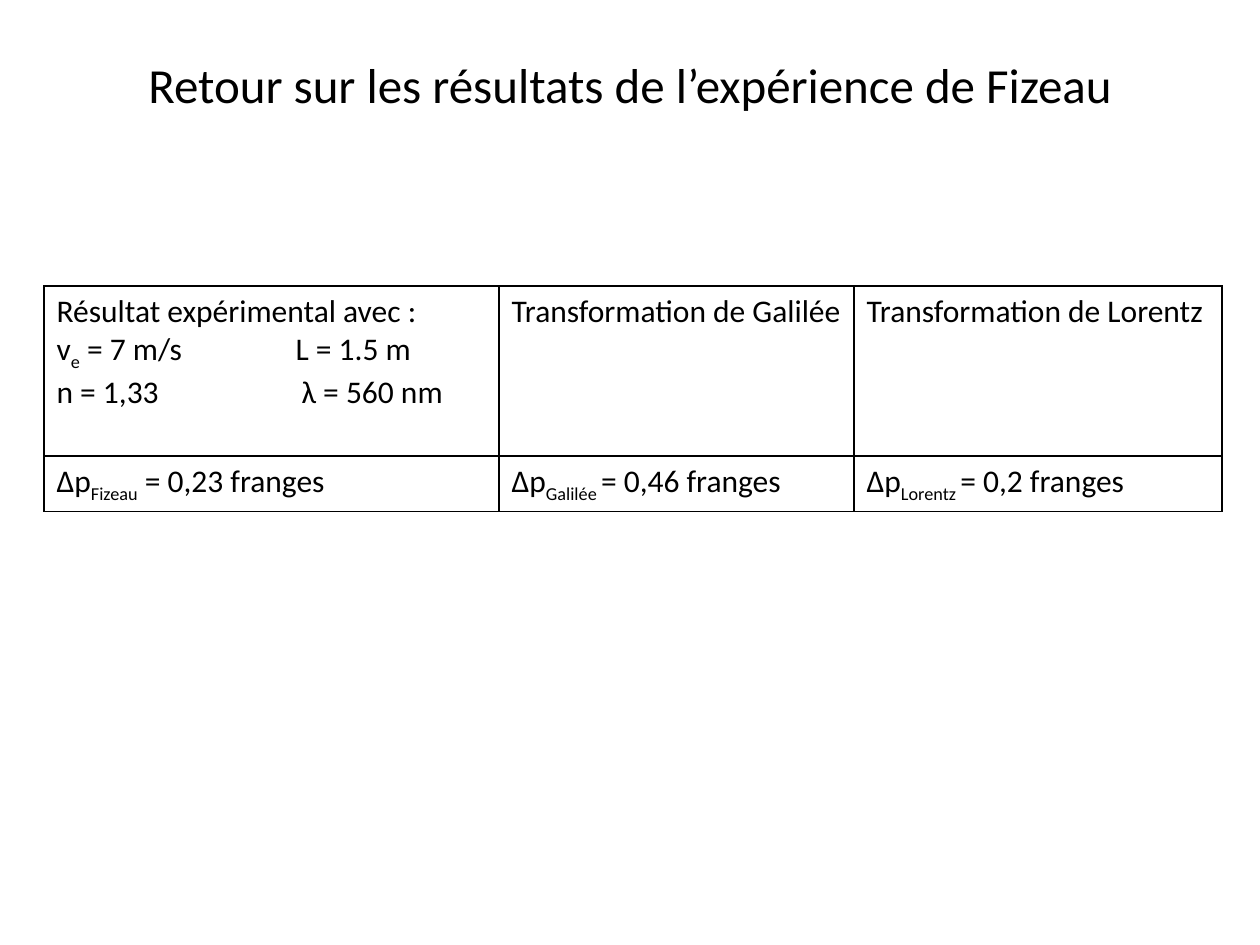
import pptx
import pptx.dml.color
import pptx.enum.text
import pptx.oxml.ns
import pptx.util
from lxml import etree

PX = 914400 / 126
BLACK = pptx.dml.color.RGBColor(0, 0, 0)
FONT = "Calibri"
TITLE_SIZE, TABLE_SIZE = 28, 18
BORDER_WIDTH = 1

COLUMN_WIDTHS = (455, 355, 368)
ROW_HEIGHTS = (170, 55)

# Each cell is a list of lines; a line is a list of (text, is_subscript)
HEADINGS = [
    [
        [("Résultat expérimental avec :", False)],
        [("v", False), ("e", True), (" = 7 m/s\tL = 1.5 m", False)],
        [("n = 1,33\tλ = 560 nm", False)],
    ],
    [[("Transformation de Galilée", False)]],
    [[("Transformation de Lorentz", False)]],
]
RESULTS = [
    [[("Δp", False), ("Fizeau", True), (" = 0,23 franges", False)]],
    [[("Δp", False), ("Galilée ", True), ("= 0,46 franges", False)]],
    [[("Δp", False), ("Lorentz ", True), ("= 0,2 franges", False)]],
]
TAB_STOPS = {1: 239, 2: 245}  # line number in a cell: px from the text edge


def px(length):
    return pptx.util.Emu(round(length * PX))


def add_run(paragraph, text, size, subscript=False):
    run = paragraph.add_run()
    run.text = text
    font_format = {"name": FONT, "size": pptx.util.Pt(size)}
    for name, value in font_format.items():
        setattr(run.font, name, value)
    run.font.color.rgb = BLACK
    if subscript:
        run.font._element.set("baseline", "-25000")


def add_tab_stop(paragraph, position):
    tag = pptx.oxml.ns.qn
    properties = paragraph._p.get_or_add_pPr()
    tab_list = etree.SubElement(properties, tag("a:tabLst"))
    etree.SubElement(tab_list, tag("a:tab"), pos=str(px(position)), algn="l")


def set_borders(cell):
    tag = pptx.oxml.ns.qn
    properties = cell._tc.get_or_add_tcPr()
    width = str(pptx.util.Pt(BORDER_WIDTH))
    for side in ("a:lnL", "a:lnR", "a:lnT", "a:lnB"):
        line = etree.SubElement(properties, tag(side), w=width)
        fill = etree.SubElement(line, tag("a:solidFill"))
        etree.SubElement(fill, tag("a:srgbClr"), val=str(BLACK))


def fill_cell(cell, lines):
    set_borders(cell)
    cell.fill.background()
    for number, line in enumerate(lines):
        frame = cell.text_frame
        paragraph = frame.add_paragraph() if number else frame.paragraphs[0]
        if number in TAB_STOPS:
            add_tab_stop(paragraph, TAB_STOPS[number])
        for text, subscript in line:
            add_run(paragraph, text, TABLE_SIZE, subscript)


def add_title(slide, text):
    box = slide.shapes.add_textbox(px(63), px(5), px(1134), px(157))
    frame_format = {
        "word_wrap": True,
        "vertical_anchor": pptx.enum.text.MSO_ANCHOR.MIDDLE,
    }
    for name, value in frame_format.items():
        setattr(box.text_frame, name, value)
    paragraph = box.text_frame.paragraphs[0]
    paragraph.alignment = pptx.enum.text.PP_ALIGN.CENTER
    add_run(paragraph, text, TITLE_SIZE)


def add_results_table(slide, rows):
    table = slide.shapes.add_table(
        len(rows), len(COLUMN_WIDTHS), px(44), px(286),
        px(sum(COLUMN_WIDTHS)), px(sum(ROW_HEIGHTS)),
    ).table
    for name, value in {"first_row": False, "horz_banding": False}.items():
        setattr(table, name, value)
    for column, width in zip(table.columns, COLUMN_WIDTHS):
        column.width = px(width)
    for row, height, contents in zip(table.rows, ROW_HEIGHTS, rows):
        row.height = px(height)
        for cell, lines in zip(row.cells, contents):
            fill_cell(cell, lines)


def main():
    presentation = pptx.Presentation()
    presentation.slide_width = px(1260)
    presentation.slide_height = px(945)
    slide = presentation.slides.add_slide(presentation.slide_layouts[6])

    # Title
    add_title(slide, "Retour sur les résultats de l’expérience de Fizeau")

    # Measured and predicted fringe shifts
    add_results_table(slide, [HEADINGS, RESULTS])

    presentation.save("out.pptx")


if __name__ == "__main__":
    main()
